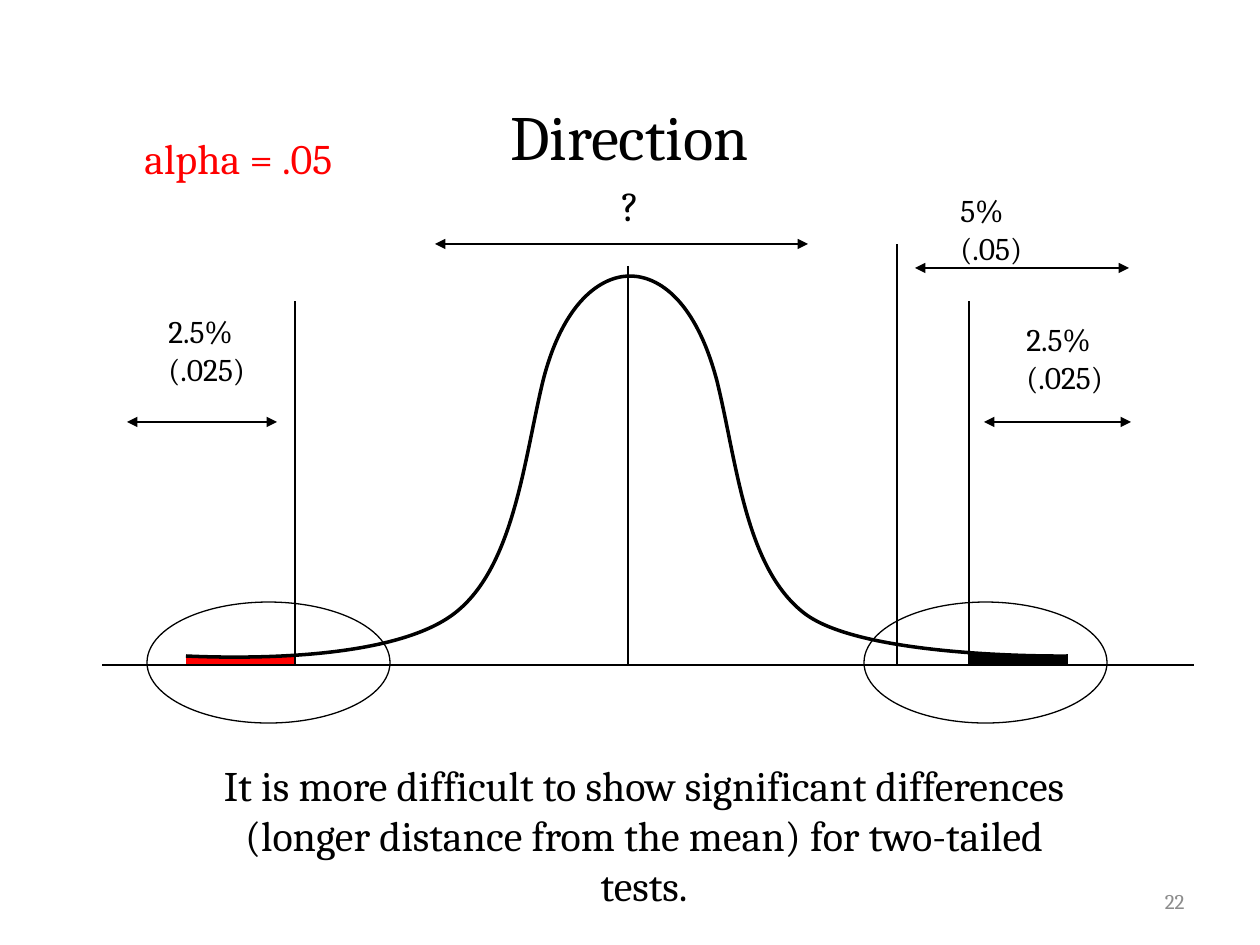
from lxml import etree
from pptx import Presentation
from pptx.dml.color import RGBColor
from pptx.enum import shapes, text
from pptx.oxml.ns import qn
from pptx.util import Pt

PX = 914400 / 126
FONT = "Cambria"
BLACK, RED, GREY = "000000", "FF0000", "8C8C8C"
LEFT, CENTER, RIGHT = text.PP_ALIGN.LEFT, text.PP_ALIGN.CENTER, text.PP_ALIGN.RIGHT
TOP, MIDDLE = text.MSO_ANCHOR.TOP, text.MSO_ANCHOR.MIDDLE

AXIS_Y = 665
LOW_CUT, MEAN, ONE_TAIL_CUT, HIGH_CUT = 295, 628, 897, 969

TITLE = ("Direction", (94, 57, 1071, 157), 36, BLACK, CENTER, MIDDLE, True)
# wording, box, size, colour, alignment, anchor, wrap
LABELS = [
    ("2.5%\n(.025)", (156, 306, 102, 88), 18, BLACK, LEFT, TOP, False),
    ("?", (609, 173, 44, 63), 24, BLACK, LEFT, TOP, False),
    ("2.5%\n(.025)", (1014, 314, 102, 88), 18, BLACK, LEFT, TOP, False),
    ("5% (.05)", (948, 185, 130, 50), 18, BLACK, LEFT, TOP, True),
    ("It is more difficult to show significant differences\v"
     "(longer distance from the mean) for two-tailed tests.",
     (188, 753, 912, 115), 24, BLACK, CENTER, TOP, True),
    ("alpha = .05", (132, 126, 215, 63), 24, RED, LEFT, TOP, False),
    ("22", (903, 876, 294, 50), 12, GREY, RIGHT, MIDDLE, True),
]

RULES = [
    (LOW_CUT, AXIS_Y, LOW_CUT, 301),
    (HIGH_CUT, AXIS_Y, HIGH_CUT, 301),
    (MEAN, 266, MEAN, AXIS_Y),
    (1194, AXIS_Y, 102, AXIS_Y),
    (ONE_TAIL_CUT, AXIS_Y, ONE_TAIL_CUT, 244),
]
SPANS = [  # left, right, y
    (127, 277, 422),
    (435, 808, 244),
    (984, 1131, 422),
    (915, 1129, 268),
]

LOW_TAIL = [(LOW_CUT, 654), (270, 656), (238, 657), (204, 657), (186, 656),
            (186, AXIS_Y), (LOW_CUT, AXIS_Y)]
HIGH_TAIL = [(HIGH_CUT, 653), (993, 654), (1022, 656), (1052, 656), (1068, 656),
             (1068, AXIS_Y), (HIGH_CUT, AXIS_Y)]
BELL = [  # start, then two control points and an end for each curve
    (186, 656),
    (252, 659), (396, 659), (455, 613),
    (514, 567), (524, 460), (543, 381),
    (563, 302), (601, 276), (630, 276),
    (659, 276), (696, 301), (717, 381),
    (737, 462), (745, 567), (804, 613),
    (863, 659), (1068, 656), (1068, 656),
]
TAIL_RINGS = [(864, 602, 243, 121), (147, 602, 243, 121)]


def emu(*lengths):
    return [round(length * PX) for length in lengths]


def rgb(color):
    return RGBColor.from_string(color)


def write(shape, wording, size, color, align, anchor, wrap):
    frame = shape.text_frame
    frame.text = wording
    frame.word_wrap = wrap
    frame.vertical_anchor = anchor
    for paragraph in frame.paragraphs:
        paragraph.alignment = align
        for run in paragraph.runs:
            run.font.name = FONT
            run.font.size = Pt(size)
            run.font.color.rgb = rgb(color)


def paint(shape, fill=None, line=None, width=0.75):
    shape.shadow.inherit = False
    if fill:
        shape.fill.solid()
        shape.fill.fore_color.rgb = rgb(fill)
    else:
        shape.fill.background()
    if line:
        shape.line.color.rgb = rgb(line)
        shape.line.width = Pt(width)
    else:
        shape.line.fill.background()


def add_line(slide, ends, arrows=False):
    line = slide.shapes.add_connector(shapes.MSO_CONNECTOR.STRAIGHT, *emu(*ends))
    line.line.color.rgb = rgb(BLACK)
    line.line.width = Pt(0.75)
    if arrows:
        outline = line.line._get_or_add_ln()
        for end in ("a:headEnd", "a:tailEnd"):
            etree.SubElement(outline, qn(end), type="triangle")
    etree.SubElement(line._element.spPr, qn("a:effectLst"))


def add_outline(slide, points, close):
    builder = slide.shapes.build_freeform(*points[0], scale=PX)
    builder.add_line_segments(points[1:], close=close)
    return builder.convert_to_shape()


def bend(shape):
    """Turn each three line segments into one cubic curve."""
    segments = list(shape._element.iter(qn("a:lnTo")))
    for first in range(0, len(segments), 3):
        curve = etree.Element(qn("a:cubicBezTo"))
        segments[first].addprevious(curve)
        for segment in segments[first:first + 3]:
            curve.append(segment[0])
            segment.getparent().remove(segment)


def main():
    deck = Presentation()
    deck.slide_width, deck.slide_height = emu(1260, 945)
    slide = deck.slides.add_slide(deck.slide_layouts[5])

    wording, box, *style = TITLE
    title = slide.shapes.title
    title.left, title.top, title.width, title.height = emu(*box)
    write(title, wording, *style)

    paint(add_outline(slide, LOW_TAIL, True), fill=RED)
    paint(add_outline(slide, HIGH_TAIL, True), fill=BLACK)
    for ends in RULES:
        add_line(slide, ends)
    for left, right, y in SPANS:
        add_line(slide, (left, y, right, y), arrows=True)

    bell = add_outline(slide, BELL, False)
    bend(bell)
    paint(bell, line=BLACK, width=2)

    for box in TAIL_RINGS:
        ring = slide.shapes.add_shape(shapes.MSO_SHAPE.OVAL, *emu(*box))
        paint(ring, line=BLACK)
    for wording, box, *style in LABELS:
        write(slide.shapes.add_textbox(*emu(*box)), wording, *style)

    deck.save("out.pptx")


if __name__ == "__main__":
    main()
